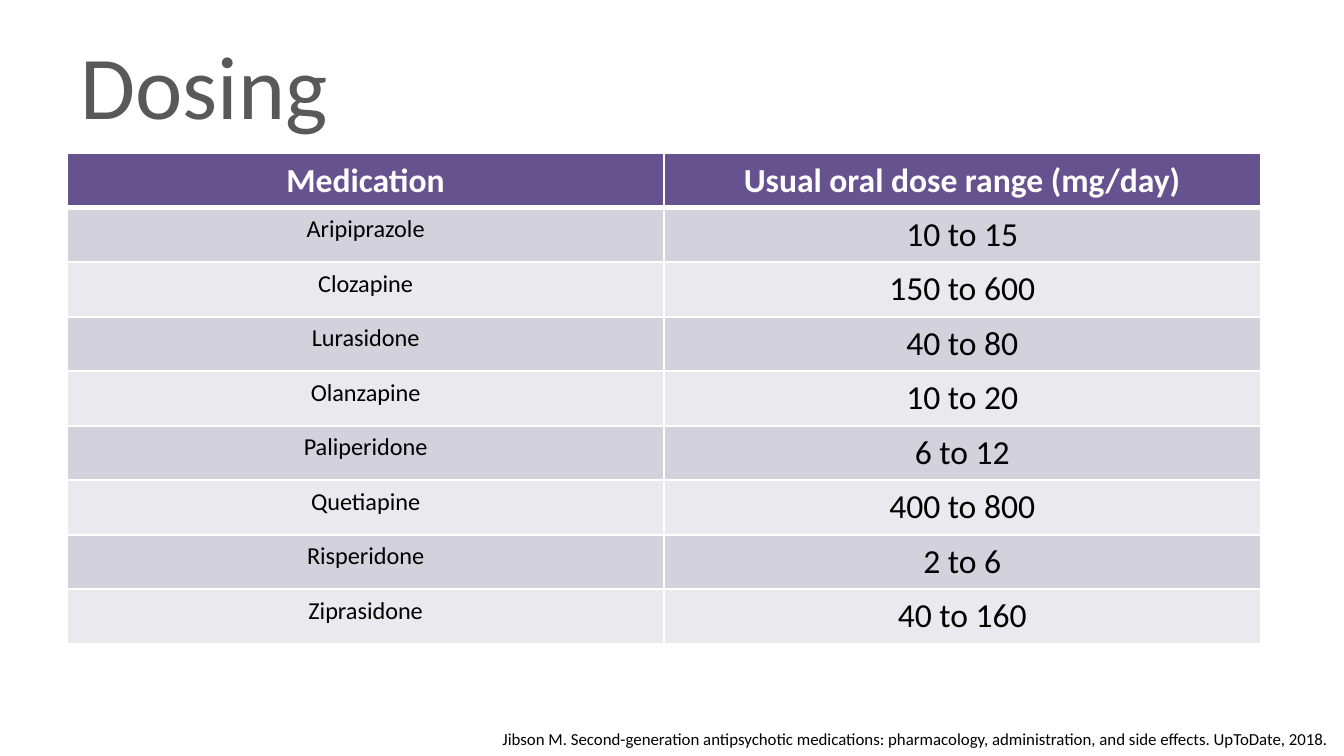
from lxml import etree
from pptx import Presentation
from pptx.dml.color import RGBColor
from pptx.enum.text import MSO_ANCHOR, PP_ALIGN
from pptx.oxml.ns import qn
from pptx.util import Inches, Pt

CENTER, LEFT = PP_ALIGN.CENTER, PP_ALIGN.LEFT
TOP, MIDDLE, BOTTOM = MSO_ANCHOR.TOP, MSO_ANCHOR.MIDDLE, MSO_ANCHOR.BOTTOM

WHITE = RGBColor(0xFF, 0xFF, 0xFF)
BLACK = RGBColor(0, 0, 0)
GRAY = RGBColor(0x59, 0x59, 0x59)
PURPLE = RGBColor(0x66, 0x52, 0x8E)
BANDS = [RGBColor(0xD3, 0xD1, 0xDB), RGBColor(0xEA, 0xE9, 0xEE)]

HEADER = ("Medication", "Usual oral dose range (mg/day)")
DOSES = [
    ("Aripiprazole", "10 to 15"),
    ("Clozapine", "150 to 600"),
    ("Lurasidone", "40 to 80"),
    ("Olanzapine", "10 to 20"),
    ("Paliperidone", "6 to 12"),
    ("Quetiapine", "400 to 800"),
    ("Risperidone", "2 to 6"),
    ("Ziprasidone", "40 to 160"),
]


def write(tf, text, size, color, bold=False, align=LEFT):
    p = tf.paragraphs[0]
    p.alignment = align
    r = p.add_run()
    r.text = text
    for name, value in dict(name="Calibri", size=Pt(size), bold=bold).items():
        setattr(r.font, name, value)
    r.font.color.rgb = color
    return p


def add_text(s, box, text, size, color, anchor=TOP):
    tf = s.shapes.add_textbox(*map(Inches, box)).text_frame
    tf.word_wrap = True
    tf.vertical_anchor = anchor
    return write(tf, text, size, color)


def set_borders(cell, widths):
    """Draw white cell borders; widths maps a side (L, R, T, B) to points."""
    tcPr = cell._tc.get_or_add_tcPr()
    for i, (side, width) in enumerate(widths.items()):
        ln = etree.Element(qn(f"a:ln{side}"), w=str(Pt(width)))
        fill = etree.SubElement(ln, qn("a:solidFill"))
        etree.SubElement(fill, qn("a:srgbClr"), val=str(WHITE))
        tcPr.insert(i, ln)


def add_dose_table(s, box):
    rows = [HEADER] + DOSES
    table = s.shapes.add_table(len(rows), len(HEADER), *map(Inches, box)).table
    for col in table.columns:
        col.width = Inches(box[2] / len(HEADER))
    for i, row in enumerate(rows):
        table.rows[i].height = Inches(box[3] / len(rows))
        head = i == 0
        for j, text in enumerate(row):
            cell = table.cell(i, j)
            cell.vertical_anchor = MIDDLE if head else TOP
            cell.fill.solid()
            cell.fill.fore_color.rgb = PURPLE if head else BANDS[(i - 1) % 2]
            size = 18 if head or j else 13
            write(cell.text_frame, text, size, WHITE if head else BLACK, head, CENTER)
            set_borders(cell, dict(L=1, R=1, T=3 if i == 1 else 1, B=3 if head else 1))


def build_dosing_slide(prs):
    s = prs.slides.add_slide(prs.slide_layouts[6])
    # Title
    p = add_text(s, (0.5, 0.34, 9, 0.71), "Dosing", 48, GRAY, BOTTOM)
    p.line_spacing = 0.7
    # Medication doses
    add_dose_table(s, (0.5, 1.14, 8.88, 3.65))
    # Citation
    add_text(s, (3.64, 5.37, 6.43, 0.25),
             "Jibson M. Second-generation antipsychotic medications: pharmacology, "
             "administration, and side effects. UpToDate, 2018.", 9, BLACK)


def main():
    prs = Presentation()
    prs.slide_width = Inches(10)
    prs.slide_height = prs.slide_width * 9 // 16
    build_dosing_slide(prs)
    prs.save("out.pptx")


if __name__ == "__main__":
    main()
